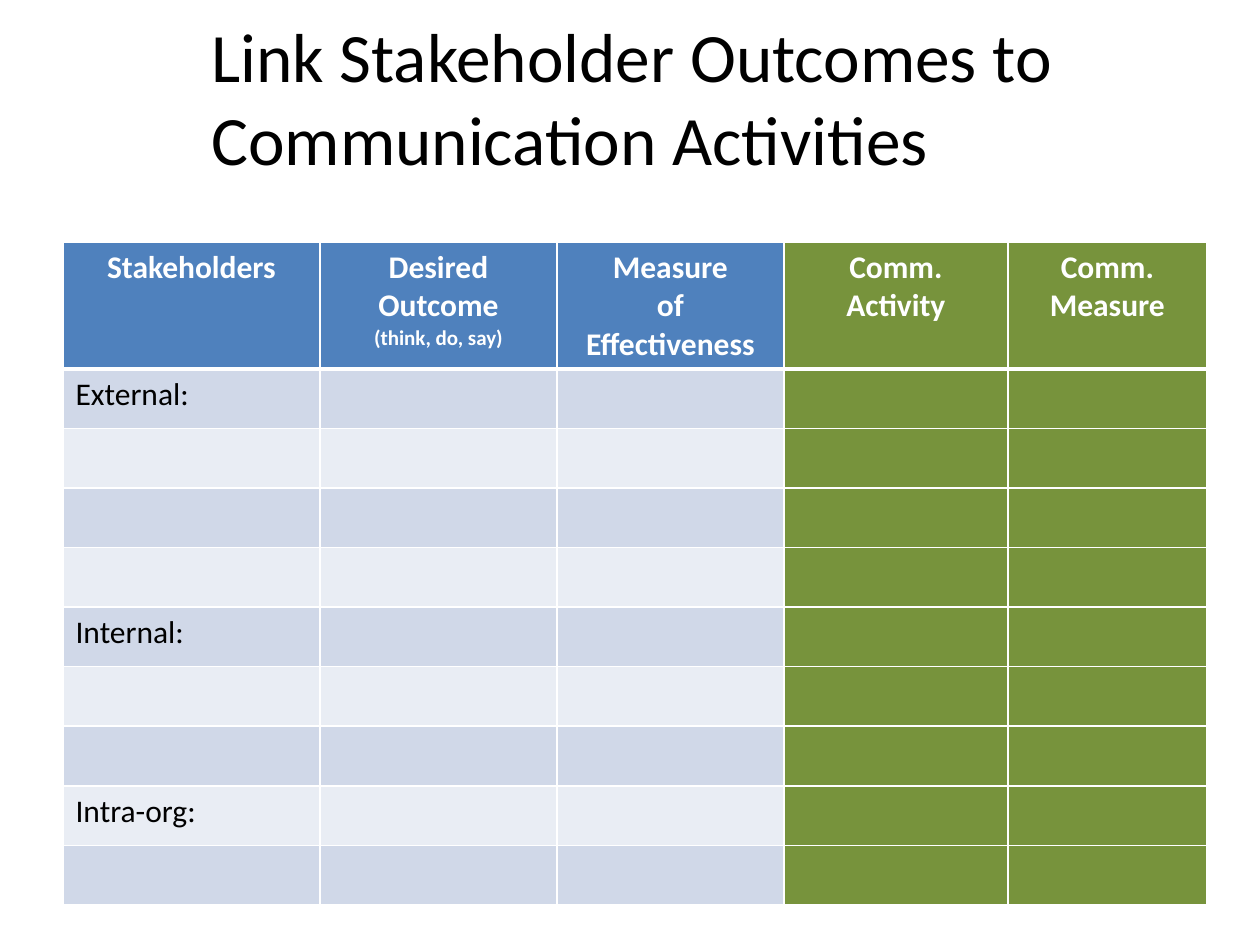
"""Build a slide with a table linking stakeholder outcomes to communication activities."""
from lxml import etree
from pptx import Presentation
from pptx.dml.color import RGBColor
from pptx.enum import text
from pptx.oxml import ns
from pptx.util import Cm, Pt

TITLE = "Link Stakeholder Outcomes to \vCommunication Activities"
HEADERS = [
    [("Stakeholders", 18)],
    [("Desired Outcome", 18), ("(think, do, say)", 12)],
    [("Measure", 18), ("of", 18), ("Effectiveness", 18)],
    [("Comm.", 18), ("Activity", 18)],
    [("Comm.", 18), ("Measure", 18)],
]
GROUPS = [("External:", 4), ("Internal:", 3), ("Intra-org:", 2)]
COLUMN_WIDTHS = [5.18, 4.78, 4.57, 4.52, 4.01]
HEADER_HEIGHT, ROW_HEIGHT = 2.56, 1.2
FIRST_GREEN_COLUMN = 3

FONT = "Calibri"
BLACK = RGBColor(0x00, 0x00, 0x00)
WHITE = RGBColor(0xFF, 0xFF, 0xFF)
BLUE = RGBColor(0x4F, 0x81, 0xBD)
GREEN = RGBColor(0x77, 0x93, 0x3C)
BANDS = [RGBColor(0xD0, 0xD8, 0xE8), RGBColor(0xE9, 0xED, 0xF4)]


def set_font(para, size, color, bold=False):
    font = para.font
    font.name, font.size, font.bold = FONT, Pt(size), bold
    font.color.rgb = color


def add_borders(cell, top, bottom):
    properties = cell._tc.get_or_add_tcPr()
    for side, width in (("L", 1), ("R", 1), ("T", top), ("B", bottom)):
        line = etree.SubElement(properties, ns.qn(f"a:ln{side}"), w=str(Pt(width)))
        fill = etree.SubElement(line, ns.qn("a:solidFill"))
        etree.SubElement(fill, ns.qn("a:srgbClr"), val=str(WHITE))


def fill_cell(cell, lines, fill, color, header=False, top=1, bottom=1):
    add_borders(cell, top, bottom)
    cell.fill.solid()
    cell.fill.fore_color.rgb = fill
    frame = cell.text_frame
    frame.text = "\n".join(words for words, size in lines)
    for para, (words, size) in zip(frame.paragraphs, lines):
        set_font(para, size, color, header)
        if header:
            para.alignment = text.PP_ALIGN.CENTER


def add_title(page):
    box = page.shapes.add_textbox(Cm(4.01), Cm(0.36), Cm(20.75), Cm(3.18))
    frame = box.text_frame
    frame.word_wrap = True
    frame.vertical_anchor = text.MSO_ANCHOR.MIDDLE
    frame.text = TITLE
    set_font(frame.paragraphs[0], 39.6, BLACK)


def add_outcome_table(page):
    labels = [label if i == 0 else "" for label, count in GROUPS for i in range(count)]
    heights = [HEADER_HEIGHT] + [ROW_HEIGHT] * len(labels)
    table = page.shapes.add_table(
        len(heights), len(HEADERS), Cm(1.27), Cm(4.88),
        Cm(sum(COLUMN_WIDTHS)), Cm(sum(heights))).table
    for column, width in zip(table.columns, COLUMN_WIDTHS):
        column.width = Cm(width)
    for row, height in zip(table.rows, heights):
        row.height = Cm(height)

    for c, header in enumerate(HEADERS):
        green = c >= FIRST_GREEN_COLUMN
        fill_cell(table.cell(0, c), header, GREEN if green else BLUE, WHITE,
                  header=True, bottom=3)
        for r, label in enumerate(labels):
            fill_cell(table.cell(r + 1, c), [(label if c == 0 else "", 18)],
                      GREEN if green else BANDS[r % 2], BLACK,
                      top=3 if r == 0 else 1)


def main():
    deck = Presentation()
    deck.slide_width, deck.slide_height = Cm(25.4), Cm(19.05)
    page = deck.slides.add_slide(deck.slide_layouts[6])
    add_title(page)
    add_outcome_table(page)
    deck.save("out.pptx")


if __name__ == "__main__":
    main()
